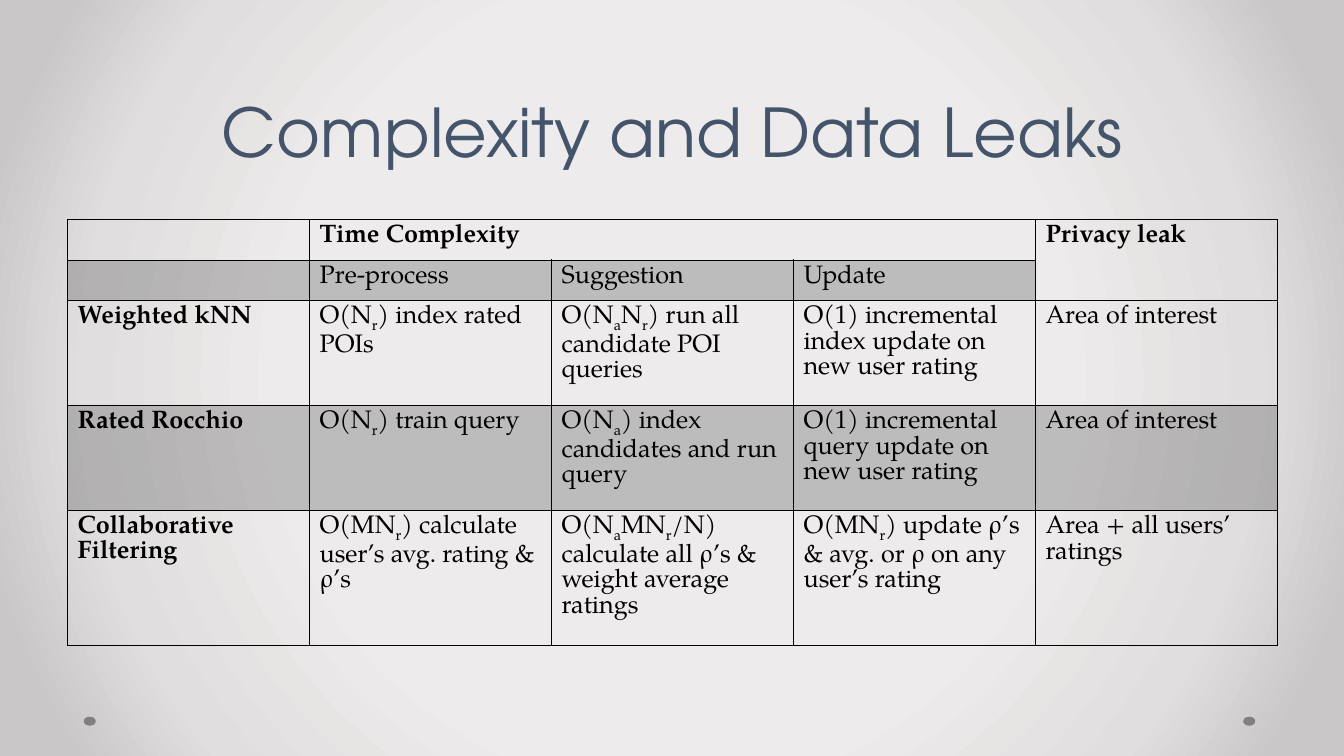
import pptx
import pptx.dml.color
import pptx.enum.shapes
import pptx.enum.text
import pptx.oxml
import pptx.oxml.ns
import pptx.util

Inches = pptx.util.Inches
Pt = pptx.util.Pt
qn = pptx.oxml.ns.qn

TITLE_FONT = "TeX Gyre Adventor"
BODY_FONT = "TeX Gyre Pagella"
NAMESPACE = 'xmlns:a="http://schemas.openxmlformats.org/drawingml/2006/main"'

# An underscore sets the next letter as a subscript
ROWS = [
    ["", "Time Complexity", "", "", "Privacy leak"],
    ["", "Pre-process", "Suggestion", "Update", ""],
    ["Weighted kNN", "O(N_r) index rated POIs",
     "O(N_aN_r) run all candidate POI queries",
     "O(1) incremental index update on new user rating", "Area of interest"],
    ["Rated Rocchio", "O(N_r) train query",
     "O(N_a) index candidates and run query",
     "O(1) incremental query update on new user rating", "Area of interest"],
    ["Collaborative Filtering", "O(MN_r) calculate user’s avg. rating & ρ’s",
     "O(N_aMN_r/N) calculate all ρ’s & weight average ratings",
     "O(MN_r) update ρ’s & avg. or ρ on any user’s rating",
     "Area + all users’ ratings"],
]


def color(hex_value):
    return pptx.dml.color.RGBColor.from_string(hex_value)


def style_font(font, name, size, hex_value, bold=False):
    font.name = name
    font.size = Pt(size)
    font.bold = bold
    font.color.rgb = color(hex_value)


def add_background(slide):
    """Radial gradient that darkens towards the edges."""
    slide.background.fill.solid()
    solid = slide.element.find(".//" + qn("a:solidFill"))
    stops = "".join(
        f'<a:gs pos="{position * 1000}"><a:srgbClr val="{hex_value}"/></a:gs>'
        for position, hex_value in [(50, "EDEBEB"), (76, "E0DEDE"), (92, "C9C7C7")])
    gradient = pptx.oxml.parse_xml(
        f'<a:gradFill {NAMESPACE} rotWithShape="1"><a:gsLst>{stops}</a:gsLst>'
        '<a:path path="circle"><a:fillToRect l="50000" t="50000" r="50000" b="50000"/>'
        '</a:path></a:gradFill>')
    solid.getparent().replace(solid, gradient)


def add_dots(slide, left, top, width):
    """One small dot at each end of the given span."""
    dot_width, dot_height = 0.12, 0.09
    for dot_left in (left, left + width - dot_width):
        dot = slide.shapes.add_shape(
            pptx.enum.shapes.MSO_SHAPE.OVAL, Inches(dot_left), Inches(top),
            Inches(dot_width), Inches(dot_height))
        dot.shadow.inherit = False
        dot.fill.solid()
        dot.fill.fore_color.rgb = color("808080")
        dot.line.fill.background()


def add_title(slide, left, top, width, height):
    box = slide.shapes.add_textbox(
        Inches(left), Inches(top), Inches(width), Inches(height))
    text_frame = box.text_frame
    text_frame.word_wrap = True
    text_frame.vertical_anchor = pptx.enum.text.MSO_ANCHOR.BOTTOM
    text_frame.text = "Complexity and Data Leaks"
    paragraph = text_frame.paragraphs[0]
    paragraph.alignment = pptx.enum.text.PP_ALIGN.CENTER
    paragraph.line_spacing = Pt(48)
    style_font(paragraph.runs[0].font, TITLE_FONT, 48, "44546A")


def write_cell(cell, text, bold):
    paragraph = cell.text_frame.paragraphs[0]

    def add_run(run_text, subscript=False):
        if not run_text:
            return
        run = paragraph.add_run()
        run.text = run_text
        style_font(run.font, BODY_FONT, 18, "000000", bold)
        if subscript:
            run._r.get_or_add_rPr().set("baseline", "-25000")

    start, *pieces = text.split("_")
    add_run(start)
    for piece in pieces:
        add_run(piece[0], subscript=True)
        add_run(piece[1:])
    # The paragraph end keeps the body font, so it adds no line height
    paragraph._p.append(pptx.oxml.parse_xml(
        f'<a:endParaRPr {NAMESPACE} sz="1800"><a:latin typeface="{BODY_FONT}"/>'
        '</a:endParaRPr>'))


def style_cell(cell, shaded):
    """Black borders, with a translucent fill on shaded rows."""
    if shaded:
        cell.fill.solid()
        cell.fill.fore_color.rgb = color("000000")
    else:
        cell.fill.background()
    properties = cell._tc.get_or_add_tcPr()
    for shade in properties.iter(qn("a:srgbClr")):
        shade.append(pptx.oxml.parse_xml(f'<a:alpha {NAMESPACE} val="20000"/>'))
    for index, side in enumerate("LRTB"):
        properties.insert(index, pptx.oxml.parse_xml(
            f'<a:ln{side} {NAMESPACE} w="{Pt(1)}"><a:solidFill>'
            f'<a:srgbClr val="000000"/></a:solidFill></a:ln{side}>'))


def add_complexity_table(slide, left, top, width, height):
    row_height = 0.4
    row_count, column_count = len(ROWS), len(ROWS[0])
    frame = slide.shapes.add_table(
        row_count, column_count, Inches(left), Inches(top),
        Inches(width), Inches(height))
    table = frame.table
    table.first_row = False
    table.horz_banding = False
    for row in table.rows:
        row.height = Inches(row_height)
    frame.height = Inches(height)
    for row_index, texts in enumerate(ROWS):
        for column_index, text in enumerate(texts):
            cell = table.cell(row_index, column_index)
            in_privacy_header = row_index == 1 and column_index == column_count - 1
            write_cell(cell, text, bold=row_index == 0 or column_index == 0)
            style_cell(cell, shaded=row_index % 2 == 1 and not in_privacy_header)
    # Header spans
    table.cell(0, 1).merge(table.cell(0, 3))
    table.cell(0, 4).merge(table.cell(1, 4))


def main():
    presentation = pptx.Presentation()
    presentation.slide_width = Inches(13.33)
    presentation.slide_height = Inches(7.5)
    slide = presentation.slides.add_slide(presentation.slide_layouts[6])
    add_background(slide)
    add_dots(slide, 0.83, 7.11, 11.62)
    add_title(slide, 0.67, 0, 12, 1.75)
    add_complexity_table(slide, 0.67, 2.18, 12, 4.11)
    presentation.save("out.pptx")


if __name__ == "__main__":
    main()
